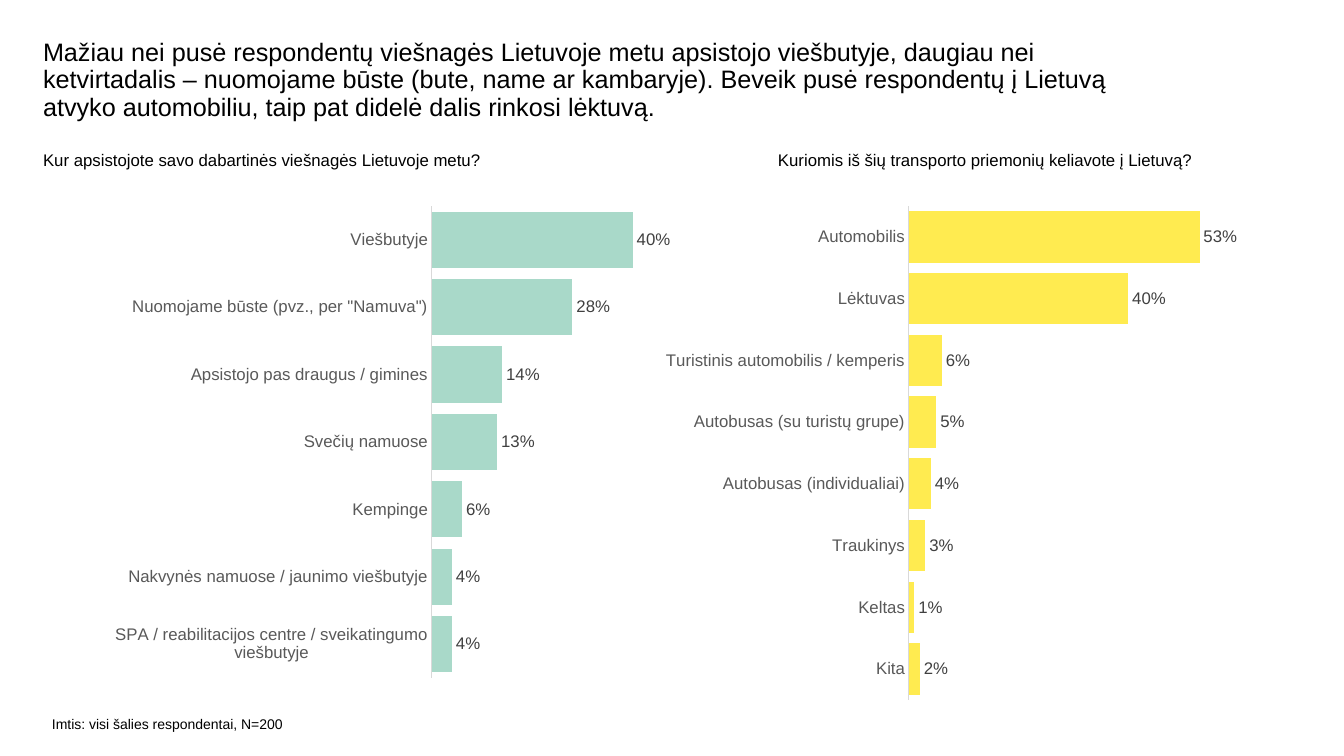
from lxml import etree
from pptx import Presentation
from pptx.chart.data import CategoryChartData
from pptx.dml.color import RGBColor
from pptx.enum.chart import XL_CHART_TYPE as CT, XL_LABEL_POSITION as LP, XL_TICK_MARK as TM
from pptx.oxml.ns import qn
from pptx.util import Pt

TITLE = ("Mažiau nei pusė respondentų viešnagės Lietuvoje metu apsistojo viešbutyje, "
         "daugiau nei ketvirtadalis – nuomojame būste (bute, name ar kambaryje). "
         "Beveik pusė respondentų į Lietuvą atvyko automobiliu, "
         "taip pat didelė dalis rinkosi lėktuvą.")
FOOTNOTE = "Imtis: visi šalies respondentai, N=200"
LODGING = {
    "Viešbutyje": 0.4,
    'Nuomojame būste (pvz., per "Namuva")': 0.28,
    "Apsistojo pas draugus / gimines": 0.14,
    "Svečių namuose": 0.13,
    "Kempinge": 0.06,
    "Nakvynės namuose / jaunimo viešbutyje": 0.04,
    "SPA / reabilitacijos centre / sveikatingumo viešbutyje": 0.04,
}
TRANSPORT = {
    "Automobilis": 0.53,
    "Lėktuvas": 0.4,
    "Turistinis automobilis / kemperis": 0.06,
    "Autobusas (su turistų grupe)": 0.05,
    "Autobusas (individualiai)": 0.04,
    "Traukinys": 0.03,
    "Keltas": 0.01,
    "Kita": 0.02,
}
THEME = dict(font="Arial", text="000000", category="595959", value="404040", axis="D9D9D9",
             lodging="A9D9C9", transport="FFEB50", title=18, body=12, note=10)
PANELS = [
    dict(question="Kur apsistojote savo dabartinės viešnagės Lietuvoje metu?",
         question_box=(43, 150, 700, 61), shares=LODGING, color=THEME["lodging"],
         box=(105, 196, 566, 492), plot=(432, 206, 226, 472), top=0.45),
    dict(question="Kuriomis iš šių transporto priemonių keliavote į Lietuvą?",
         question_box=(778, 150, 566, 61), shares=TRANSPORT, color=THEME["transport"],
         box=(655, 196, 598, 515), plot=(909, 206, 329, 494), top=0.6),
]
W, H = 1344, 756
EMU_PER_PX = 12192000 / W


def px(*lengths):
    return [round(n * EMU_PER_PX) for n in lengths]


def style_font(font, size, color):
    font.name = THEME["font"]
    font.size = Pt(size)
    font.color.rgb = RGBColor.from_string(color)


def add_text(s, text, box, size=THEME["body"], color=THEME["text"], spacing=None):
    tf = s.shapes.add_textbox(*px(*box)).text_frame
    tf.word_wrap = True
    tf.margin_left = tf.margin_top = tf.margin_right = tf.margin_bottom = 0
    p = tf.paragraphs[0]
    p.line_spacing = spacing
    r = p.add_run()
    r.text = text
    style_font(r.font, size, color)


def place_plot(chart, box, plot):
    area = chart.plots[0]._element.getparent()
    for old in area.findall(qn("c:layout")):
        area.remove(old)
    layout = etree.Element(qn("c:layout"))
    area.insert(0, layout)
    manual = etree.SubElement(layout, qn("c:manualLayout"))
    x, y, w, h = box
    left, top, width, height = plot
    settings = dict(layoutTarget="inner", xMode="edge", yMode="edge",
                    x=(left - x) / w, y=(top - y) / h, w=width / w, h=height / h)
    for tag, val in settings.items():
        etree.SubElement(manual, qn(f"c:{tag}")).set("val", str(val))


def add_bars(s, shares, color, box, plot, top):
    data = CategoryChartData(number_format="0%")
    data.categories = list(shares)
    data.add_series("Series 1", list(shares.values()))
    chart = s.shapes.add_chart(CT.BAR_CLUSTERED, *px(*box), data).chart
    chart.has_legend = chart.has_title = False
    style_font(chart.font, THEME["note"], THEME["text"])

    cat = chart.category_axis
    cat.reverse_order = True
    cat.has_major_gridlines = False
    cat.major_tick_mark = cat.minor_tick_mark = TM.NONE
    cat.format.line.color.rgb = RGBColor.from_string(THEME["axis"])
    cat.format.line.width = Pt(0.75)
    style_font(cat.tick_labels.font, THEME["body"], THEME["category"])

    val = chart.value_axis
    val.visible = val.has_major_gridlines = False
    val.minimum_scale, val.maximum_scale = 0, top

    bars = chart.plots[0]
    bars.gap_width = 20
    bars.vary_by_categories = False
    ser = bars.series[0]
    ser.format.fill.solid()
    ser.format.fill.fore_color.rgb = RGBColor.from_string(color)
    labels = ser.data_labels
    labels.show_value = True
    labels.position = LP.OUTSIDE_END
    labels.number_format, labels.number_format_is_linked = "0%", False
    style_font(labels.font, THEME["body"], THEME["value"])
    place_plot(chart, box, plot)


def main():
    prs = Presentation()
    prs.slide_width, prs.slide_height = px(W, H)
    s = prs.slides.add_slide(prs.slide_layouts[6])
    add_text(s, TITLE, (43, 40, 1097, 82), size=THEME["title"], spacing=0.9)
    for panel in PANELS:
        add_text(s, panel["question"], panel["question_box"])
        add_bars(s, *(panel[k] for k in ("shares", "color", "box", "plot", "top")))
    add_text(s, FOOTNOTE, (52, 715, 255, 24), size=THEME["note"])
    prs.save("out.pptx")


if __name__ == "__main__":
    main()
